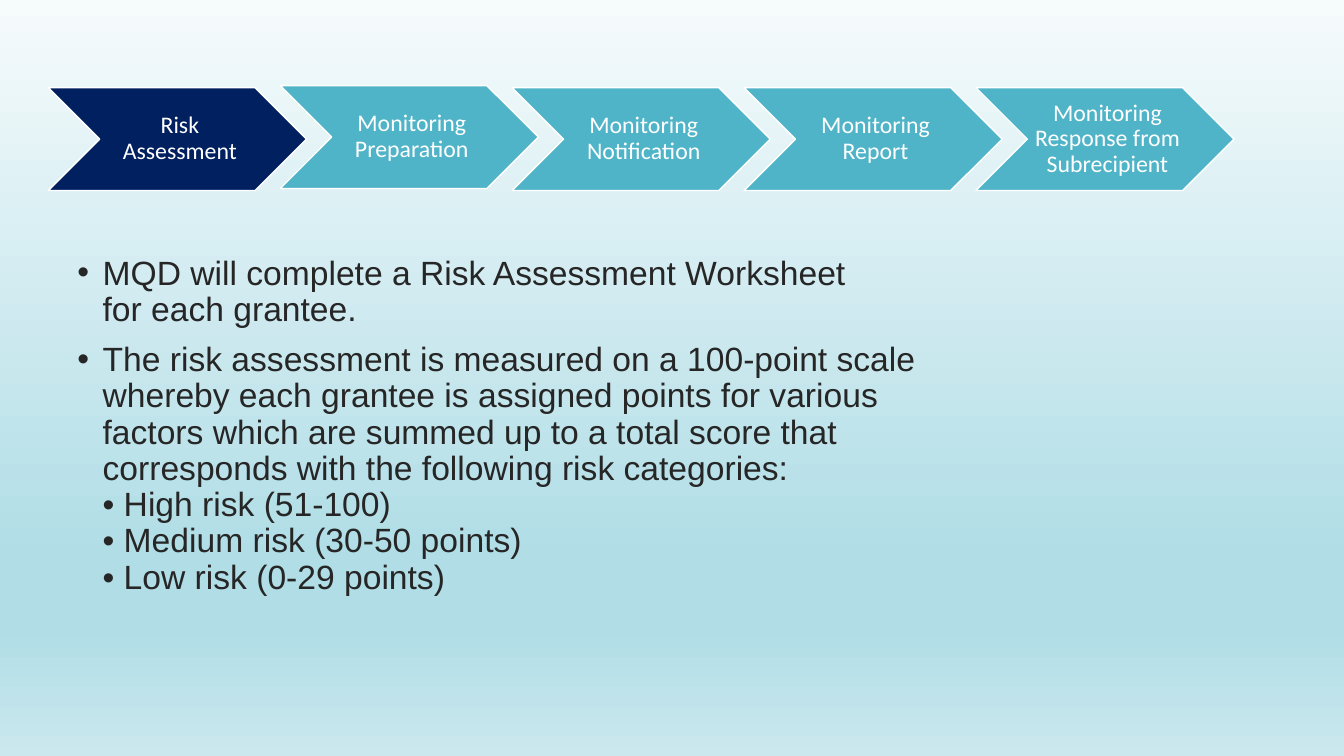
from dataclasses import dataclass

from lxml import etree
from pptx import Presentation
from pptx.dml.color import RGBColor
from pptx.enum.shapes import MSO_SHAPE
from pptx.enum.text import MSO_ANCHOR, PP_ALIGN
from pptx.oxml.ns import qn
from pptx.slide import Slide
from pptx.util import Inches, Pt

CHEVRON = MSO_SHAPE.CHEVRON
MIDDLE = MSO_ANCHOR.MIDDLE
TOP = MSO_ANCHOR.TOP
CENTER = PP_ALIGN.CENTER
LEFT = PP_ALIGN.LEFT

COLORS = {
    "current": "002060",
    "upcoming": "50B4C8",
    "white": "FFFFFF",
    "body": "262626",
}
BACKGROUND_STOPS = {0: "F6FBFC", 74: "B0DDE6", 83: "B0DDE6", 100: "CBE8EE"}
STEP_LEFT = 0.48
STEP_PITCH = 2.3


@dataclass
class Step:
    label: str
    color: str = "upcoming"
    top: float = 0.87


STEPS = [
    Step("Risk Assessment", color="current"),
    Step("Monitoring Preparation", top=0.85),
    Step("Monitoring Notification"),
    Step("Monitoring Report"),
    Step("Monitoring Response from Subrecipient"),
]
BULLETS = [
    "MQD will complete a Risk Assessment Worksheet\nfor each grantee.",
    "The risk assessment is measured on a 100-point scale\n"
    "whereby each grantee is assigned points for various\n"
    "factors which are summed up to a total score that\n"
    "corresponds with the following risk categories:\n"
    "• High risk (51-100)\n"
    "• Medium risk (30-50 points)\n"
    "• Low risk (0-29 points)",
]


def rgb(name: str) -> RGBColor:
    return RGBColor.from_string(COLORS[name])


def paint_background(slide: Slide) -> None:
    """Fill the slide with a four-stop gradient from top to bottom."""
    fill = slide.background.fill
    fill.gradient()
    fill.gradient_angle = 270
    stop_list = next(slide.element.iter(qn("a:gsLst")))
    for stop in list(stop_list):
        stop_list.remove(stop)
    for percent, color in BACKGROUND_STOPS.items():
        stop = etree.SubElement(stop_list, qn("a:gs"), pos=str(percent * 1000))
        etree.SubElement(stop, qn("a:srgbClr"), val=color)


def add_step(slide: Slide, step: Step, left: float) -> None:
    shape = slide.shapes.add_shape(
        CHEVRON, Inches(left), Inches(step.top), Inches(2.56), Inches(1.02)
    )
    shape.shadow.inherit = False
    shape.fill.solid()
    shape.fill.fore_color.rgb = rgb(step.color)
    shape.line.color.rgb = rgb("white")
    shape.line.width = Pt(1)

    frame = shape.text_frame
    frame.word_wrap = True
    frame.vertical_anchor = MIDDLE
    frame.margin_left = Inches(0.07)
    frame.margin_right = frame.margin_top = frame.margin_bottom = Inches(0.02)
    paragraph = frame.paragraphs[0]
    paragraph.text = step.label
    paragraph.alignment = CENTER
    paragraph.line_spacing = 0.9
    paragraph.font.name = "Calibri"
    paragraph.font.size = Pt(17)
    paragraph.font.color.rgb = rgb("white")


def add_bullets(slide: Slide, bullets: list[str]) -> None:
    box = slide.shapes.add_textbox(
        Inches(0.39), Inches(2.54), Inches(12.94), Inches(4.23)
    )
    frame = box.text_frame
    frame.word_wrap = True
    frame.vertical_anchor = TOP
    frame.margin_top = 0
    for index, text in enumerate(bullets):
        paragraph = frame.add_paragraph() if index else frame.paragraphs[0]
        paragraph.text = text
        paragraph.alignment = LEFT
        paragraph.line_spacing = 0.9
        paragraph.space_before = Pt(10 if index else 0)
        paragraph.font.name = "Arial"
        paragraph.font.size = Pt(24)
        paragraph.font.color.rgb = rgb("body")

        properties = paragraph._p.get_or_add_pPr()
        properties.set("marL", str(Inches(0.53)))
        properties.set("indent", str(Inches(-0.25)))
        bullet_font = etree.Element(qn("a:buFont"), typeface="Arial")
        bullet = etree.Element(qn("a:buChar"), char="•")
        default_run = properties.find(qn("a:defRPr"))
        default_run.addprevious(bullet_font)
        default_run.addprevious(bullet)


def main() -> None:
    presentation = Presentation()
    presentation.slide_width = Inches(13.33)
    presentation.slide_height = Inches(7.5)
    slide = presentation.slides.add_slide(presentation.slide_layouts[6])
    paint_background(slide)
    add_bullets(slide, BULLETS)
    for index, step in enumerate(STEPS):
        add_step(slide, step, STEP_LEFT + index * STEP_PITCH)
    presentation.save("out.pptx")


if __name__ == "__main__":
    main()
